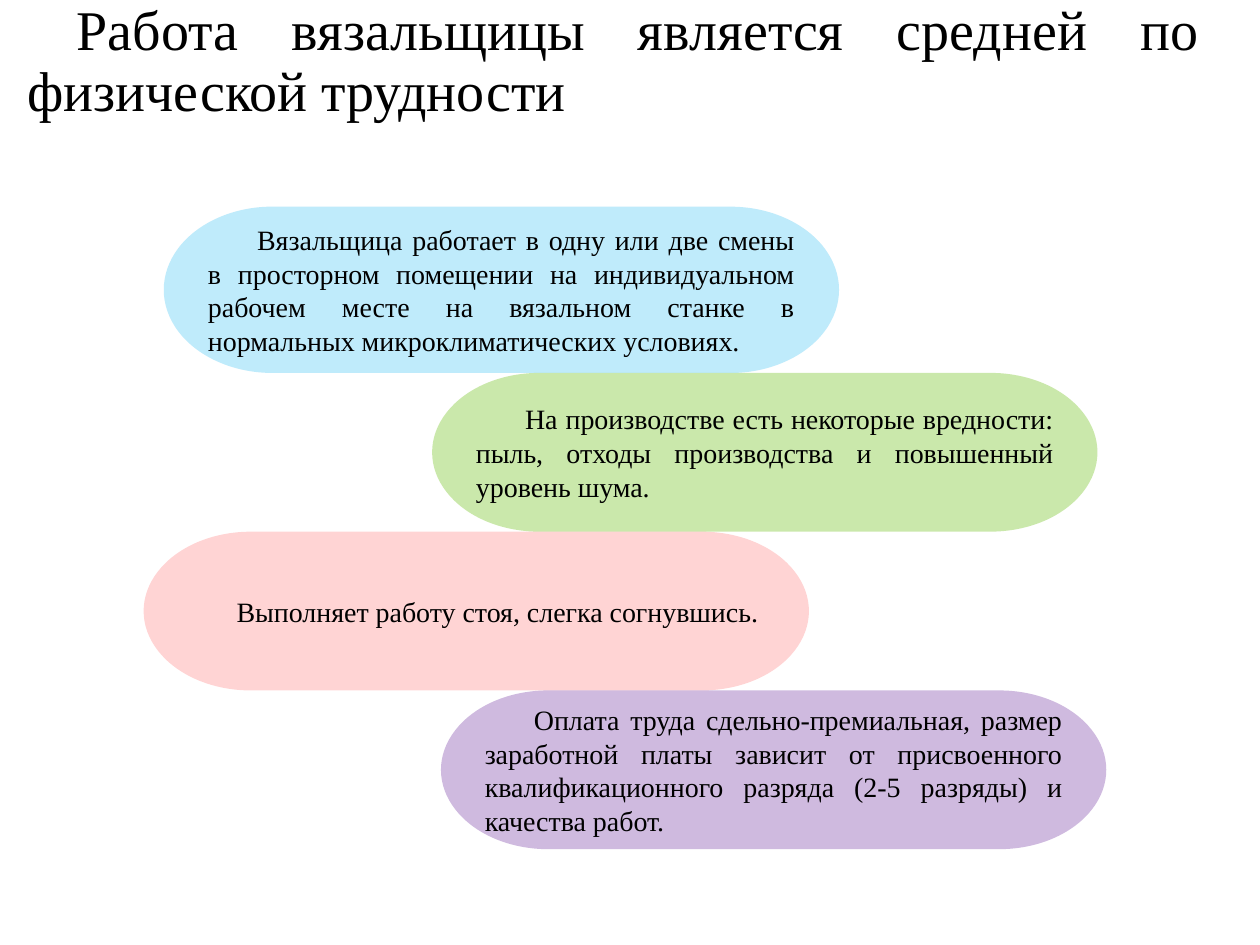
from dataclasses import dataclass

from lxml.etree import SubElement
from pptx import Presentation
from pptx.dml.color import RGBColor
from pptx.enum.shapes import MSO_SHAPE
from pptx.enum.text import MSO_ANCHOR, PP_ALIGN
from pptx.oxml.ns import qn
from pptx.slide import Slide
from pptx.text.text import TextFrame
from pptx.util import Inches, Pt

SLIDE_WIDTH, SLIDE_HEIGHT = Inches(10), Inches(7.5)
FIRST_LINE_INDENT = Inches(0.39)
CAPSULES_TOP = Inches(1.64)


@dataclass(frozen=True)
class Theme:
    font: str = "Times New Roman"
    text: str = "000000"
    title_size: int = 32
    body_size: int = 16
    blue: str = "00B0F0"
    green: str = "92D050"
    red: str = "FF0000"
    purple: str = "7030A0"


@dataclass(frozen=True)
class Capsule:
    """A rounded statement; left and width are shares of the slide width."""
    text: str
    color: str
    opacity_percent: int
    left: float
    width: float = 0.528
    height: float = 0.168


THEME = Theme()
TITLE = "Работа вязальщицы является средней по физической трудности"
CAPSULES = [
    Capsule("Вязальщица работает в одну или две смены в просторном помещении "
            "на индивидуальном рабочем месте на вязальном станке в нормальных "
            "микроклиматических условиях.",
            THEME.blue, 25, left=0.13, width=0.536, height=0.176),
    Capsule("На производстве есть некоторые вредности: пыль, отходы "
            "производства и повышенный уровень шума.",
            THEME.green, 48, left=0.343),
    Capsule("Выполняет работу стоя, слегка согнувшись.",
            THEME.red, 17, left=0.114),
    Capsule("Оплата труда сдельно-премиальная, размер заработной платы зависит "
            "от присвоенного квалификационного разряда (2-5 разряды) и "
            "качества работ.",
            THEME.purple, 33, left=0.35),
]


def write_text(frame: TextFrame, text: str, size: int, line_spacing: float = 1.0) -> None:
    """Fill the frame with one justified paragraph with an indented first line."""
    frame.word_wrap = True
    paragraph = frame.paragraphs[0]
    paragraph.alignment = PP_ALIGN.JUSTIFY
    paragraph.line_spacing = line_spacing
    properties = paragraph._p.get_or_add_pPr()
    properties.set("marL", "0")
    properties.set("indent", str(FIRST_LINE_INDENT))
    run = paragraph.add_run()
    run.text = text
    run.font.name = THEME.font
    run.font.size = Pt(size)
    run.font.color.rgb = RGBColor.from_string(THEME.text)


def add_title(slide: Slide) -> None:
    box = slide.shapes.add_textbox(Inches(0.12), Inches(-0.03), Inches(9.5), Inches(1.42))
    write_text(box.text_frame, TITLE, THEME.title_size, line_spacing=0.9)


def add_capsule(slide: Slide, capsule: Capsule, top: int) -> int:
    """Draw the capsule and return its bottom edge."""
    height = round(capsule.height * SLIDE_HEIGHT)
    shape = slide.shapes.add_shape(
        MSO_SHAPE.FLOWCHART_TERMINATOR,
        round(capsule.left * SLIDE_WIDTH), top,
        round(capsule.width * SLIDE_WIDTH), height)
    shape.shadow.inherit = False
    shape.line.fill.background()
    shape.fill.solid()
    shape.fill.fore_color.rgb = RGBColor.from_string(capsule.color)
    color = shape._element.spPr.find(qn("a:solidFill"))[0]
    SubElement(color, qn("a:alpha"), val=str(capsule.opacity_percent * 1000))
    shape.text_frame.vertical_anchor = MSO_ANCHOR.MIDDLE
    write_text(shape.text_frame, capsule.text, THEME.body_size)
    return top + height


def main() -> None:
    presentation = Presentation()
    presentation.slide_width, presentation.slide_height = SLIDE_WIDTH, SLIDE_HEIGHT
    slide = presentation.slides.add_slide(presentation.slide_layouts[6])
    add_title(slide)
    top = CAPSULES_TOP
    for capsule in CAPSULES:
        top = add_capsule(slide, capsule, top)
    presentation.save("out.pptx")


if __name__ == "__main__":
    main()
